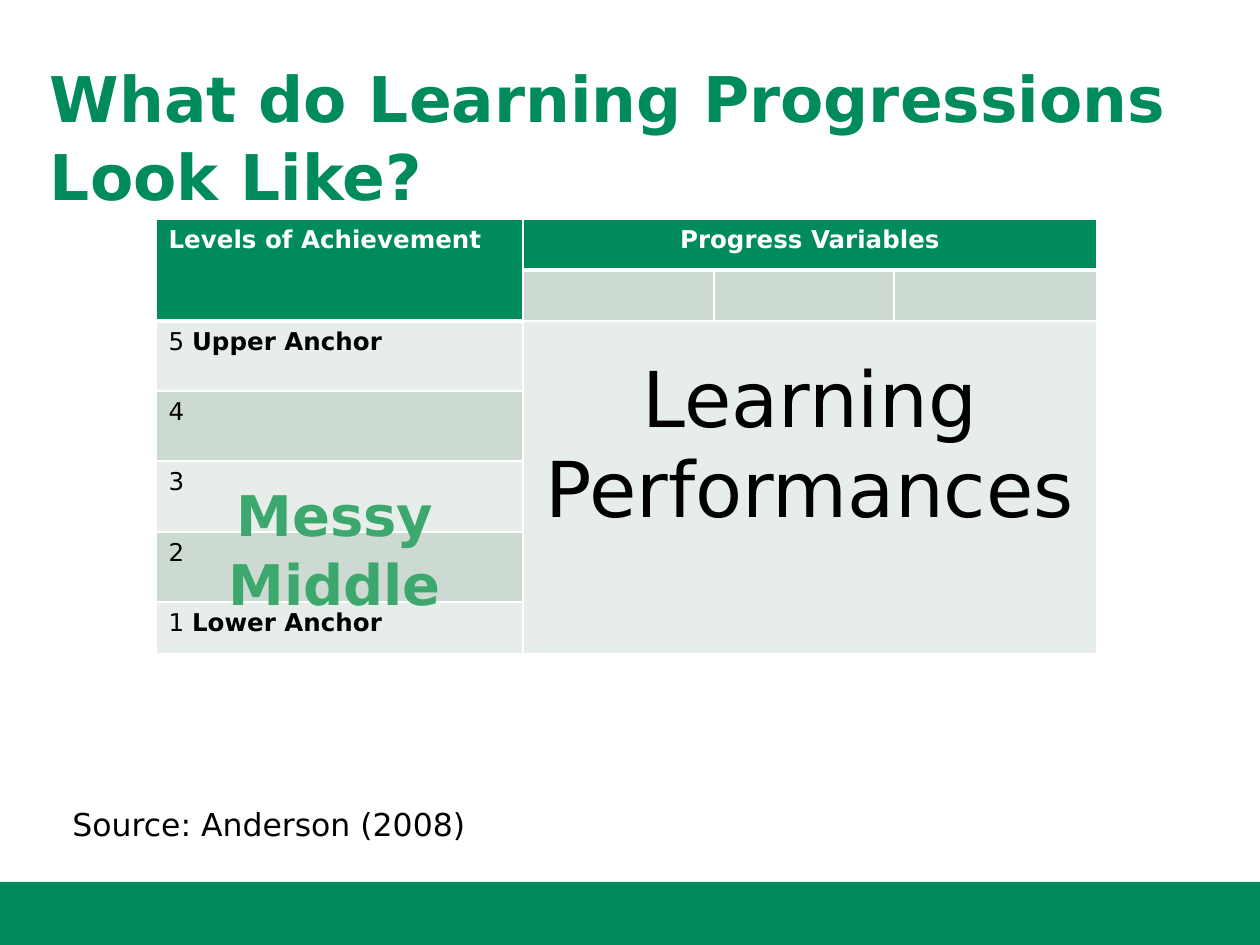
from lxml import etree
from pptx import Presentation, util as u
from pptx.dml.color import RGBColor
from pptx.enum import shapes, text
from pptx.oxml.ns import qn

PX = u.Inches(1) // 126
GREEN, DARK_BAND, LIGHT_BAND = "008B5D", "CCDAD2", "E7EEEA"
WHITE, BLACK = "FFFFFF", "000000"
CENTER = text.PP_ALIGN.CENTER


def write(text_frame, parts, size, color, align=None):
    """Fill the first paragraph with (words, bold) parts and return it."""
    paragraph = text_frame.paragraphs[0]
    paragraph.alignment = align
    for words, bold in parts:
        run = paragraph.add_run()
        run.text = words
        run.font.name = "DejaVu Sans"
        run.font.size = u.Pt(size)
        run.font.bold = bold
        run.font.color.rgb = RGBColor.from_string(color)
    return paragraph


def style_cell(cell, fill, top=1, bottom=1):
    """Set the fill and the white borders, with widths in points."""
    cell.fill.solid()
    cell.fill.fore_color.rgb = RGBColor.from_string(fill)
    properties = cell._tc.get_or_add_tcPr()
    borders = [("lnL", 1), ("lnR", 1), ("lnT", top), ("lnB", bottom)]
    for index, (side, width) in enumerate(borders):
        line = etree.Element(qn(f"a:{side}"), w=str(u.Pt(width)))
        solid = etree.SubElement(line, qn("a:solidFill"))
        etree.SubElement(solid, qn("a:srgbClr"), val=WHITE)
        properties.insert(index, line)


presentation = Presentation()
presentation.slide_width = 1260 * PX
presentation.slide_height = 945 * PX
slide = presentation.slides.add_slide(presentation.slide_layouts[6])

# Footer band
band = slide.shapes.add_shape(
    shapes.MSO_SHAPE.RECTANGLE, 0, 882 * PX, 1260 * PX, 63 * PX)
band.shadow.inherit = False
band.fill.solid()
band.fill.fore_color.rgb = RGBColor.from_string(GREEN)
band.line.fill.background()

# Title
title = slide.shapes.add_textbox(50 * PX, 54 * PX, 1134 * PX, 123 * PX).text_frame
title.word_wrap = True
title.margin_left = 0
title.margin_top = 3 * PX
paragraph = write(title, [("What do Learning Progressions Look Like?", True)], 36, GREEN)
paragraph.line_spacing = 1.03

# Table of levels against progress variables
column_widths = [367, 191, 180, 203]
row_heights = [51, 51, 70, 70, 71, 70, 52]
table = slide.shapes.add_table(
    len(row_heights), len(column_widths), 156 * PX, 219 * PX,
    sum(column_widths) * PX, sum(row_heights) * PX).table
table.first_row = False
table.horz_banding = False
for column, width in zip(table.columns, column_widths):
    column.width = width * PX
for row, height in zip(table.rows, row_heights):
    row.height = height * PX

for row in range(len(row_heights)):
    for column in range(len(column_widths)):
        header = row == 0 or (row == 1 and column == 0)
        if header:
            fill = GREEN
        elif row % 2 and (column == 0 or row == 1):
            fill = DARK_BAND
        else:
            fill = LIGHT_BAND
        below_header = row == (2 if column == 0 else 1)
        style_cell(table.cell(row, column), fill,
                   top=3 if below_header else 1, bottom=3 if header else 1)

table.cell(0, 0).merge(table.cell(1, 0))
table.cell(0, 1).merge(table.cell(0, 3))
table.cell(2, 1).merge(table.cell(6, 3))

write(table.cell(0, 0).text_frame, [("Levels of Achievement", True)], 14, WHITE)
write(table.cell(0, 1).text_frame, [("Progress Variables", True)], 14, WHITE, CENTER)
performances = table.cell(2, 1)
performances.margin_top = 35 * PX
write(performances.text_frame, [("Learning Performances", False)], 44, BLACK, CENTER)

anchors = {5: "Upper Anchor", 1: "Lower Anchor"}
for row, level in enumerate(range(5, 0, -1), start=2):
    if level in anchors:
        parts = [(f"{level} ", False), (anchors[level], True)]
    else:
        parts = [(str(level), False)]
    paragraph = write(table.cell(row, 0).text_frame, parts, 14, BLACK)
    indent = u.Inches(0.25)
    properties = paragraph._p.get_or_add_pPr()
    properties.set("marL", str(indent))
    properties.set("indent", str(-indent))

# Label over the middle levels
middle = slide.shapes.add_textbox(209 * PX, 472 * PX, 252 * PX, 149 * PX).text_frame
middle.word_wrap = True
paragraph = write(middle, [("Messy Middle", True)], 32, "3CA86D", CENTER)
paragraph.line_spacing = 1.03

# Source line
source = slide.shapes.add_textbox(60 * PX, 799 * PX, 1133 * PX, 50 * PX).text_frame
source.word_wrap = True
write(source, [("Source: Anderson (2008)", False)], 18, BLACK)

presentation.save("out.pptx")
